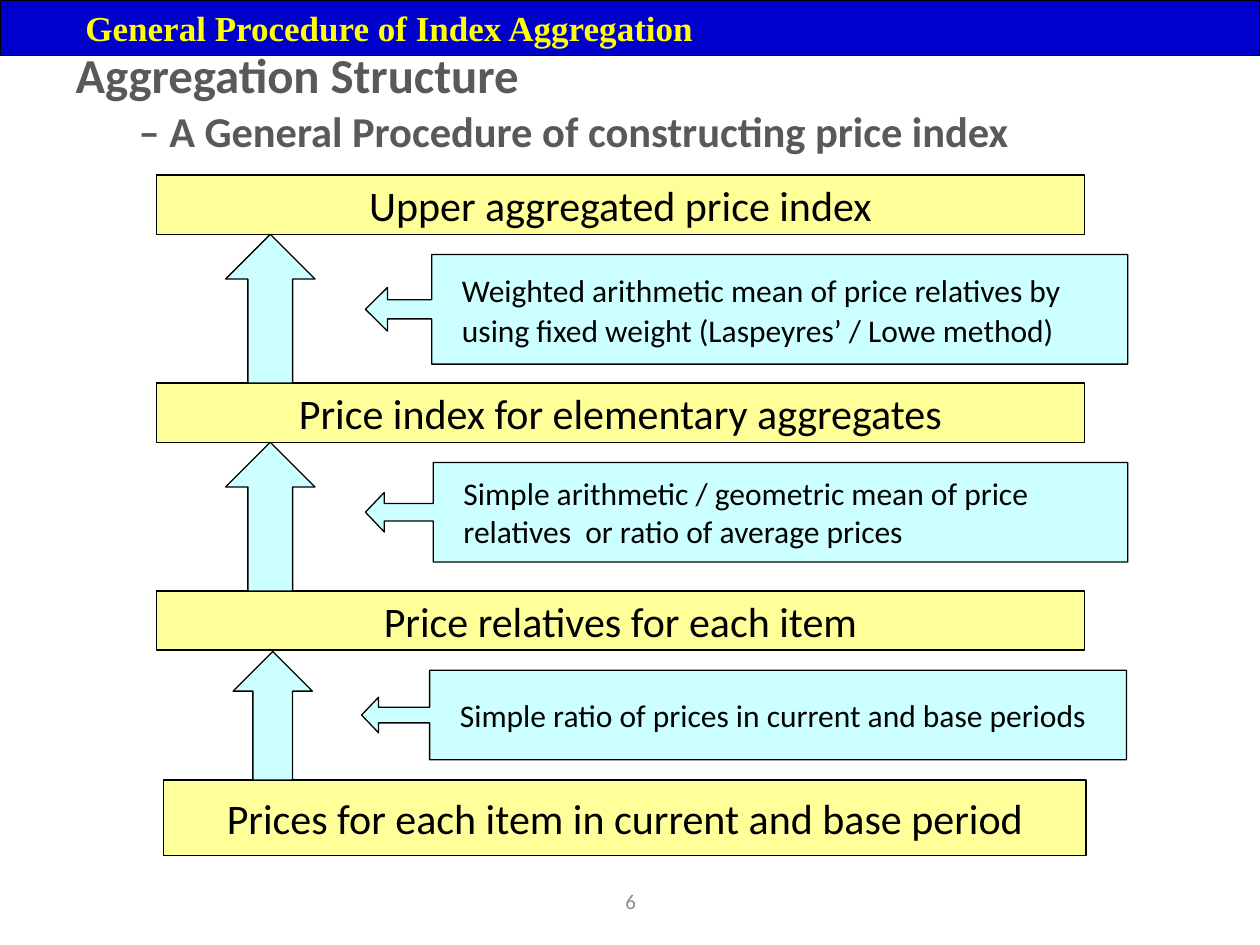
from dataclasses import dataclass

from lxml import etree
from pptx import Presentation
from pptx.dml.color import RGBColor
from pptx.enum import shapes, text
from pptx.oxml.ns import qn
from pptx.util import Inches, Pt

BLACK = RGBColor(0x00, 0x00, 0x00)
NAVY = RGBColor(0x00, 0x00, 0xCC)
YELLOW = RGBColor(0xFF, 0xFF, 0x00)
PALE_YELLOW = RGBColor(0xFF, 0xFF, 0x99)
PALE_CYAN = RGBColor(0xCC, 0xFF, 0xFF)
DARK_GREY = RGBColor(0x59, 0x59, 0x59)
MID_GREY = RGBColor(0x8C, 0x8C, 0x8C)


@dataclass
class Box:
    left: float
    top: float
    width: float
    height: float


@dataclass
class Stage:
    box: Box
    label: str


@dataclass
class Method:
    box: Box
    label: str
    head: float = 0.19
    body: float = 0.911
    line_spacing: float = 1.0
    space_before: float = 0


STAGES = [
    Stage(Box(1.24, 1.39, 7.37, 0.47), "Upper aggregated price index"),
    Stage(Box(1.24, 3.04, 7.37, 0.47), "Price index for elementary aggregates"),
    Stage(Box(1.24, 4.69, 7.37, 0.47), "Price relatives for each item"),
    Stage(Box(1.3, 6.19, 7.32, 0.6), "Prices for each item in current and base period"),
]
METHODS = [
    Method(Box(2.9, 2.02, 6.05, 0.87),
           "Weighted arithmetic mean of price relatives by using fixed weight "
           "(Laspeyres’ / Lowe method)", 0.201, 0.913, 1.04, 3.6),
    Method(Box(2.9, 3.67, 6.05, 0.79),
           "Simple arithmetic / geometric mean of price relatives  or ratio of average prices"),
    Method(Box(2.87, 5.32, 6.07, 0.71),
           "Simple ratio of prices in current and base periods"),
]
ARROWS = [Box(1.79, 1.86, 0.71, 1.18), Box(1.79, 3.51, 0.71, 1.18), Box(1.85, 5.17, 0.63, 1.02)]


def lengths(box: Box) -> list:
    return [Inches(v) for v in (box.left, box.top, box.width, box.height)]


def style_run(r, size: float, color: RGBColor, bold: bool = False, name: str = "Calibri") -> None:
    r.font.size, r.font.bold, r.font.name = Pt(size), bold, name
    r.font.color.rgb = color


def add_block(slide, kind, box: Box, fill: RGBColor):
    sp = slide.shapes.add_shape(kind, *lengths(box))
    sp.shadow.inherit = False
    sp.fill.solid()
    sp.fill.fore_color.rgb = fill
    sp.line.color.rgb = BLACK
    sp.line.width = Pt(0.75)
    return sp


def write(sp, label: str, size: float, align, wrap: bool = True, inset: float = 0.05):
    tf = sp.text_frame
    tf.word_wrap = wrap
    tf.vertical_anchor = text.MSO_ANCHOR.MIDDLE
    tf.margin_left = tf.margin_right = Inches(inset)
    tf.margin_top = tf.margin_bottom = Inches(0.05)
    p = tf.paragraphs[0]
    p.text = label
    p.alignment = align
    style_run(p.runs[0], size, BLACK)
    return p


def set_indent(p, margin: float, first: float) -> None:
    pPr = p._p.get_or_add_pPr()
    pPr.set("marL", str(Inches(margin)))
    pPr.set("indent", str(Inches(first)))


def add_stage(slide, stage: Stage) -> None:
    sp = add_block(slide, shapes.MSO_SHAPE.RECTANGLE, stage.box, PALE_YELLOW)
    write(sp, stage.label, 24, text.PP_ALIGN.CENTER, wrap=False)


def add_method(slide, method: Method) -> None:
    sp = add_block(slide, shapes.MSO_SHAPE.LEFT_ARROW_CALLOUT, method.box, PALE_CYAN)
    for i, value in enumerate((0.175, 0.199, method.head, method.body)):
        sp.adjustments[i] = value
    p = write(sp, method.label, 18, text.PP_ALIGN.LEFT)
    set_indent(p, 0.19, 0)
    p.line_spacing = method.line_spacing
    p.space_before = Pt(method.space_before)


def add_title(slide) -> None:
    sp = slide.shapes.title
    sp.left, sp.top, sp.width, sp.height = lengths(Box(0.5, 0.44, 9, 0.71))
    tf = sp.text_frame
    tf.auto_size = text.MSO_AUTO_SIZE.NONE
    tf.vertical_anchor = text.MSO_ANCHOR.MIDDLE
    p = tf.paragraphs[0]
    p.text = "Aggregation Structure \v"
    p.alignment = text.PP_ALIGN.LEFT
    # The line break needs its own size, or it takes the template's
    etree.SubElement(p._p.find(qn("a:br")), qn("a:rPr"), sz="2790")
    for words in ("\t", "– A General Procedure of constructing price index"):
        p.add_run().text = words
    for r, size in zip(p.runs, (27.9, 25.2, 24.3)):
        style_run(r, size, DARK_GREY, bold=True)


def main() -> None:
    prs = Presentation()
    prs.slide_width, prs.slide_height = Inches(10), Inches(7.5)
    slide = prs.slides.add_slide(prs.slide_layouts[5])

    # Slide number and title
    number = slide.shapes.add_textbox(*lengths(Box(3.42, 6.95, 3.17, 0.4)))
    p = write(number, "6", 12, text.PP_ALIGN.CENTER)
    p.runs[0].font.color.rgb = MID_GREY
    add_title(slide)

    # Aggregation levels, methods and the arrows between levels
    for stage in STAGES:
        add_stage(slide, stage)
    for method in METHODS:
        add_method(slide, method)
    for box in ARROWS:
        add_block(slide, shapes.MSO_SHAPE.UP_ARROW, box, PALE_CYAN)

    # Banner
    banner = add_block(slide, shapes.MSO_SHAPE.RECTANGLE, Box(0, 0, 10, 0.44), NAVY)
    p = write(banner, "General Procedure of Index Aggregation", 20, text.PP_ALIGN.LEFT, inset=0.1)
    set_indent(p, 0, 0.58)
    style_run(p.runs[0], 20, YELLOW, bold=True, name="Times New Roman")

    prs.save("out.pptx")


if __name__ == "__main__":
    main()
